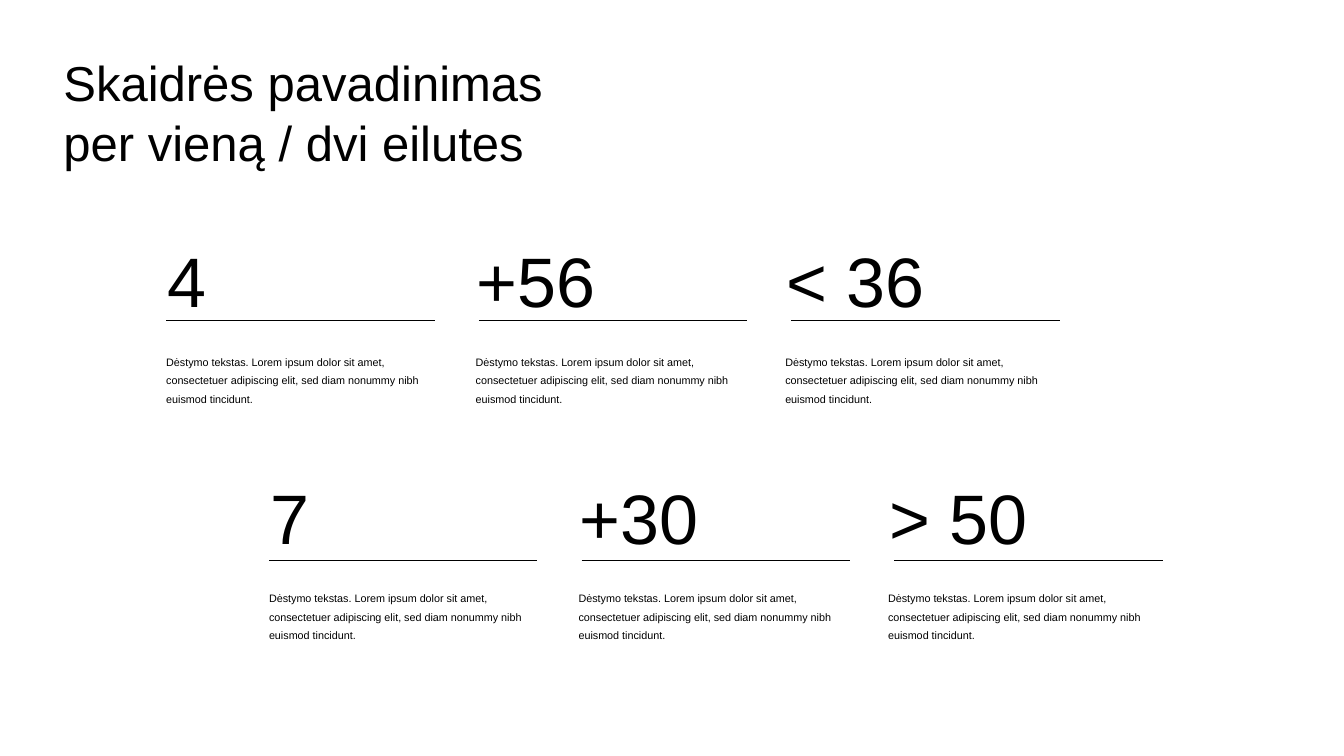
from lxml import etree
from pptx import Presentation
from pptx.dml.color import RGBColor
from pptx.enum.shapes import MSO_CONNECTOR as CONNECTOR
from pptx.oxml.ns import qn
from pptx.util import Inches, Pt

COLORS = {"background": "FFFFFF", "ink": "000000"}
FONT = "Arial"

# Grid in inches: the second row is shifted to the right
LEFT, TOP = 1.55, 2.28
COLUMN_PITCH, ROW_PITCH, ROW_SHIFT = 3.07, 2.35, 1.02
RULE_COLUMN_PITCH, RULE_ROW_PITCH, RULE_WIDTH = 3.1, 2.38, 2.66

TITLE = "Skaidrės pavadinimas per vieną / dvi eilutes"
DESCRIPTION = ("Dėstymo tekstas. Lorem ipsum dolor sit amet, consectetuer "
               "adipiscing elit, sed diam nonummy nibh euismod tincidunt.")
FIGURES = [["4", "+56", "< 36"], ["7", "+30", "> 50"]]


def add_text(slide, text, left, top, width, height, size, line_height):
    box = slide.shapes.add_textbox(*map(Inches, (left, top, width, height)))
    box.text_frame.word_wrap = True
    paragraph = box.text_frame.paragraphs[0]
    paragraph.text = text
    paragraph.line_spacing = Pt(line_height)
    font = paragraph.runs[0].font
    font.name, font.size = FONT, Pt(size)
    font.color.rgb = RGBColor.from_string(COLORS["ink"])


def add_rule(slide, left, top):
    rule = slide.shapes.add_connector(
        CONNECTOR.STRAIGHT, Inches(left), Inches(top),
        Inches(left + RULE_WIDTH), Inches(top))
    rule.line.color.rgb = RGBColor.from_string(COLORS["ink"])
    rule.line.width = Pt(1)
    etree.SubElement(rule._element.spPr, qn("a:effectLst"))


def add_figure(slide, figure, column, row):
    row_left = LEFT + row * ROW_SHIFT
    left = row_left + column * COLUMN_PITCH
    top = TOP + row * ROW_PITCH
    add_text(slide, figure, left + 0.01, top, 2.99, 0.84, 50, 62)
    add_text(slide, DESCRIPTION, left, top + 1.14, 3, 0.62, 7.7, 13.2)
    add_rule(slide, row_left + 0.1 + column * RULE_COLUMN_PITCH,
             TOP + 0.9 + row * RULE_ROW_PITCH)


def main():
    deck = Presentation()
    deck.slide_width, deck.slide_height = Inches(13.33), Inches(7.5)
    slide = deck.slides.add_slide(deck.slide_layouts[6])
    background = slide.background.fill
    background.solid()
    background.fore_color.rgb = RGBColor.from_string(COLORS["background"])

    # Title
    add_text(slide, TITLE, 0.53, 0.46, 5.35, 1.38, 35, 43)

    # Two rows of key figures
    for row, figures in enumerate(FIGURES):
        for column, figure in enumerate(figures):
            add_figure(slide, figure, column, row)

    deck.save("out.pptx")


if __name__ == "__main__":
    main()
